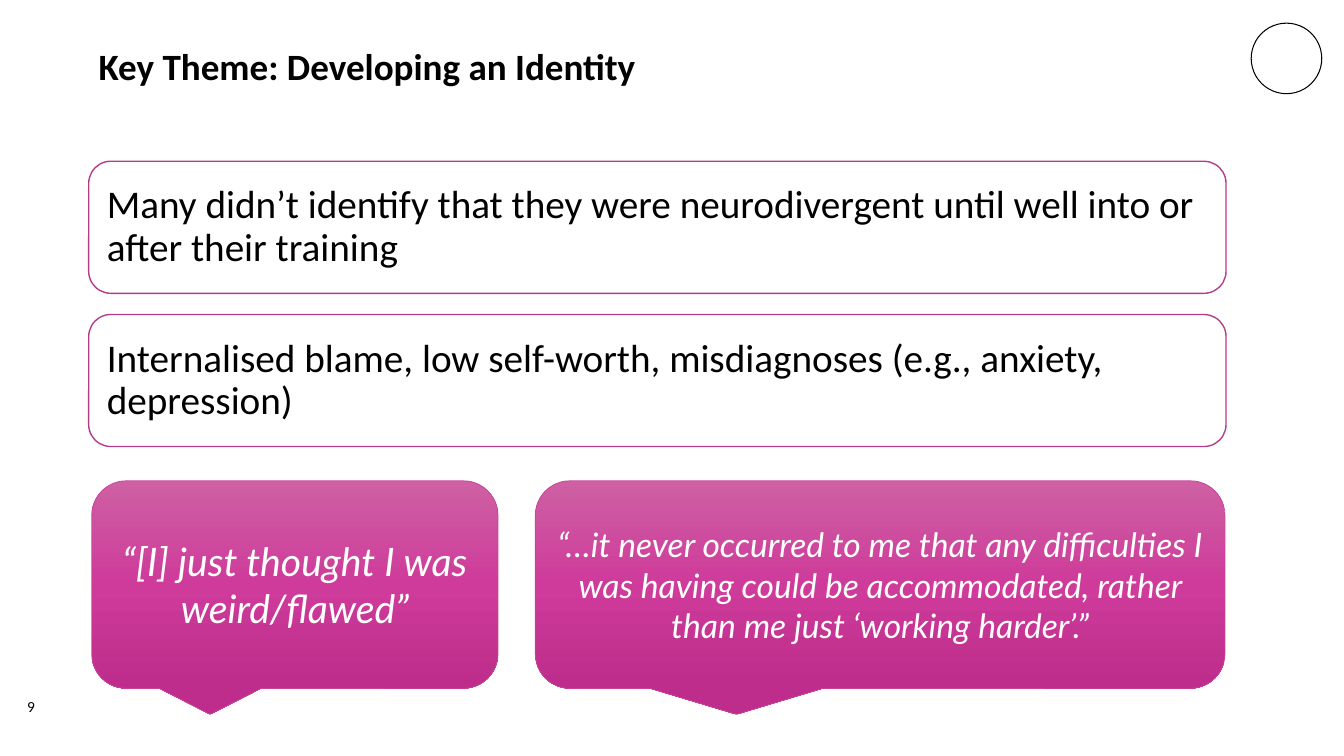
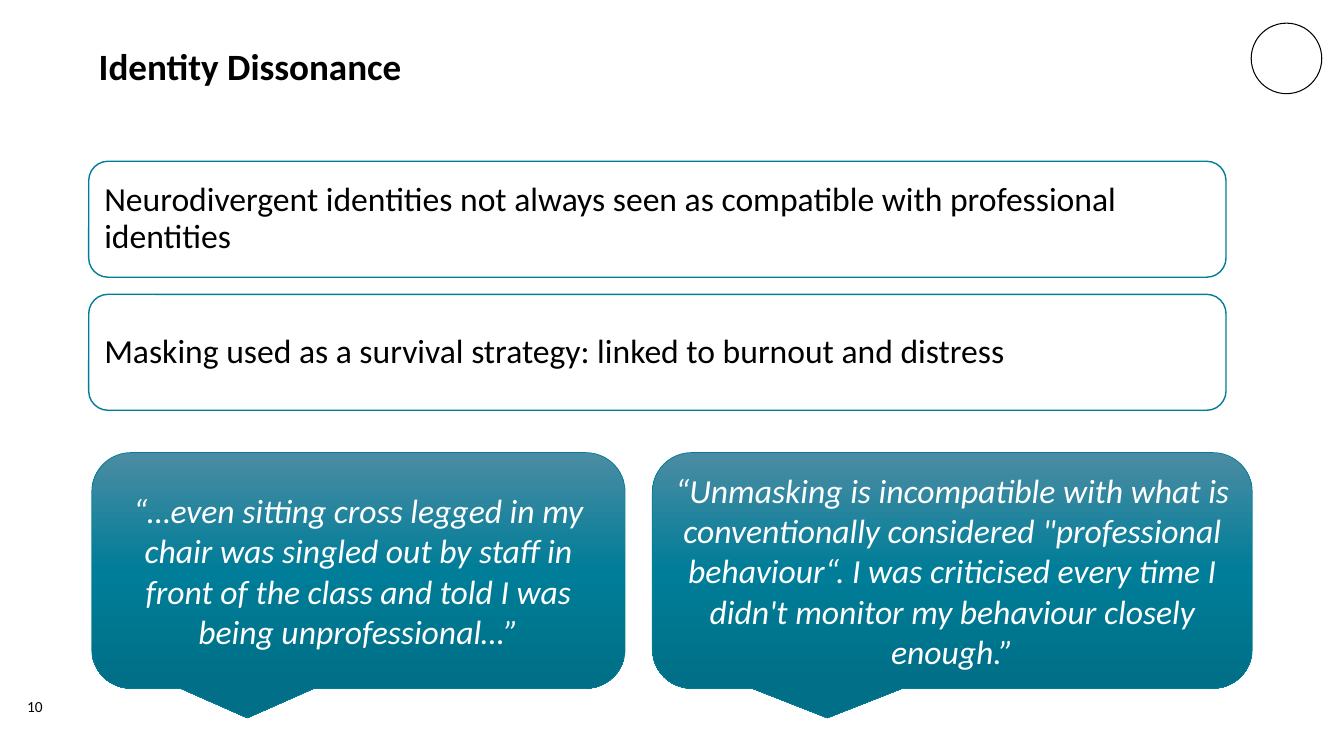
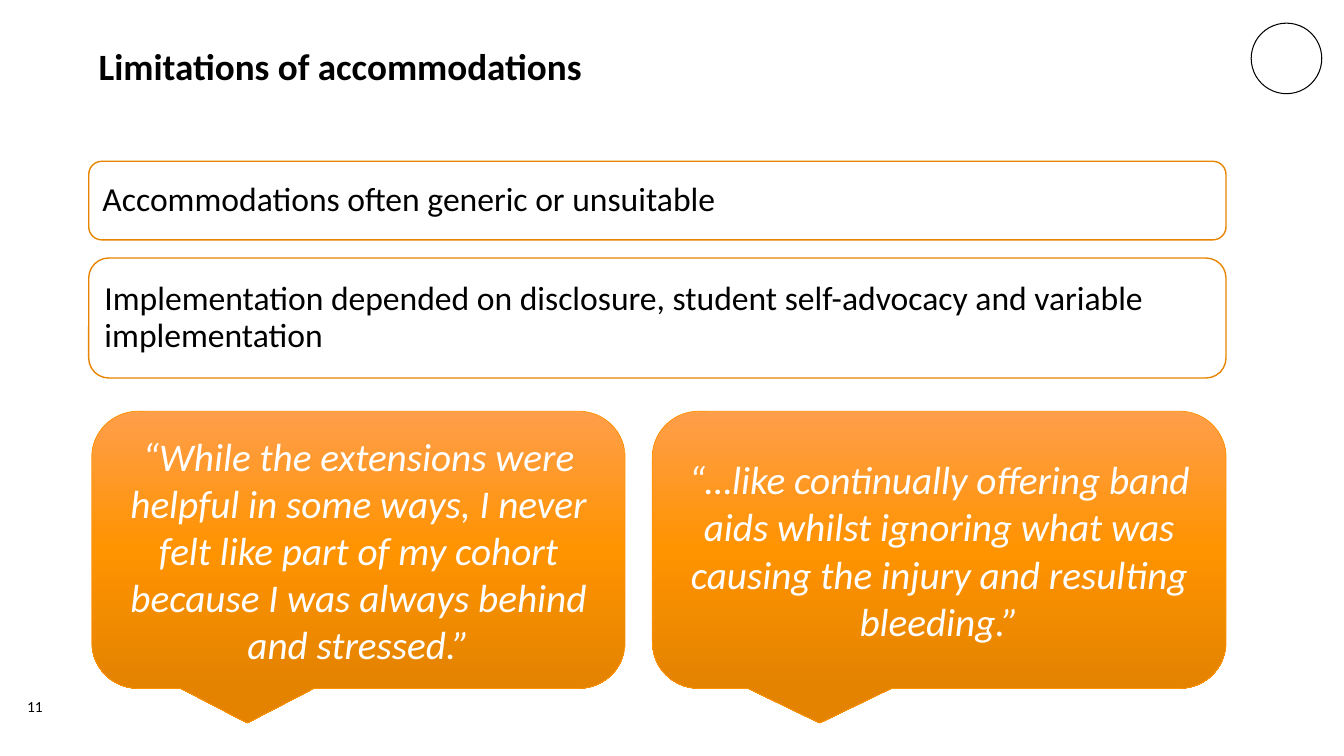
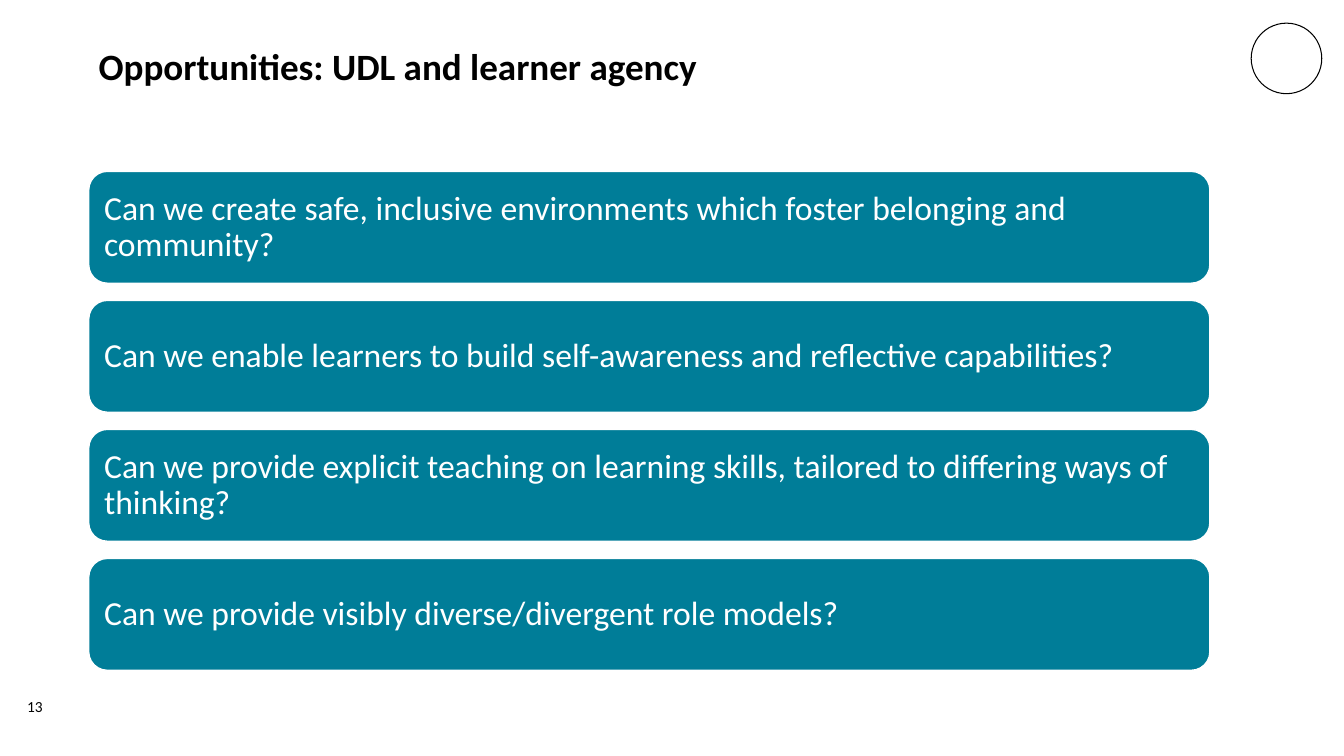
from copy import deepcopy

from pptx import Presentation
from pptx.dml.color import RGBColor
from pptx.enum import shapes, text
from pptx.oxml.ns import qn
from pptx.util import Inches, Pt

BLACK = RGBColor(0x00, 0x00, 0x00)
WHITE = RGBColor(0xFF, 0xFF, 0xFF)
MAGENTA = RGBColor(0xB5, 0x3C, 0x8A)
TEAL = RGBColor(0x00, 0x7D, 0x98)
AMBER = RGBColor(0xE7, 0x85, 0x00)

# Quote colours: gradient from top to bottom, then outline
MAGENTA_QUOTE = ((RGBColor(0xCE, 0x60, 0xA3), RGBColor(0xCE, 0x3B, 0x9A),
                  RGBColor(0xBE, 0x2D, 0x8B)), RGBColor(0xC7, 0x42, 0x98))
TEAL_QUOTE = ((RGBColor(0x4B, 0x8C, 0xA3), TEAL, RGBColor(0x00, 0x6F, 0x87)), TEAL)
AMBER_QUOTE = ((RGBColor(0xFF, 0x9E, 0x4B), RGBColor(0xFF, 0x93, 0x00),
                RGBColor(0xE3, 0x83, 0x00)), RGBColor(0xFF, 0x93, 0x00))

SHAPE = shapes.MSO_SHAPE
LEFT = 0.88
QUOTE_BOTTOM = 6.83


class Deck:
    """Shared style and the slide being filled."""

    def __init__(self):
        self.deck = Presentation()
        self.deck.slide_width = Inches(13.33)
        self.deck.slide_height = Inches(7.5)
        self.page = None

    def put_text(self, box, words, size, color, font="Calibri", bold=False, italic=False,
                 anchor=text.MSO_ANCHOR.MIDDLE, align=text.PP_ALIGN.LEFT,
                 spacing=1.0, insets=(0.1, 0.05, 0.1, 0.05)):
        frame = box.text_frame
        frame.text = words
        frame.word_wrap = True
        frame.vertical_anchor = anchor
        (frame.margin_left, frame.margin_top,
         frame.margin_right, frame.margin_bottom) = map(Inches, insets)
        para = frame.paragraphs[0]
        para.alignment = align
        para.line_spacing = spacing
        style = para.runs[0].font
        style.name, style.size, style.color.rgb = font, Pt(size), color
        style.bold, style.italic = bold, italic

    def textbox(self, left, top, width, height):
        return self.page.shapes.add_textbox(*map(Inches, (left, top, width, height)))

    def shape(self, kind, left, top, width, height, line, weight):
        box = self.page.shapes.add_shape(kind, *map(Inches, (left, top, width, height)))
        box.shadow.inherit = False
        box.line.color.rgb = line
        box.line.width = Pt(weight)
        return box

    def new_page(self, title, number, title_width=6.02):
        self.page = self.deck.slides.add_slide(self.deck.slide_layouts[6])
        # Corner ring
        ring = self.shape(SHAPE.OVAL, 12.41, 0.23, 0.7, 0.7, BLACK, 0.75)
        ring.fill.background()
        # Title and page number
        self.put_text(self.textbox(LEFT, 0.38, title_width, 1.02), title, 26.5, BLACK,
                      bold=True, anchor=text.MSO_ANCHOR.TOP)
        self.put_text(self.textbox(0.27, 6.88, 0.63, 0.27), str(number), 11, BLACK,
                      spacing=0.9, insets=(0, 0.05, 0.1, 0.05))

    def cards(self, top, width, gap, size, cards, fill, line, ink):
        """Stack rounded cards, given as (height, words), from the top down."""
        for height, words in cards:
            card = self.shape(SHAPE.ROUNDED_RECTANGLE, LEFT, top, width, height, line, 1)
            card.fill.solid()
            card.fill.fore_color.rgb = fill
            self.put_text(card, words, size, ink, spacing=0.9, insets=(size / 240,) * 4)
            top += height + gap

    def quote(self, left, top, width, words, size, colors, font="Calibri"):
        shades, line = colors
        bubble = self.shape(SHAPE.ROUNDED_RECTANGULAR_CALLOUT, left, top, width,
                            QUOTE_BOTTOM - top, line, 0.5)
        bubble.fill.gradient()
        bubble.fill.gradient_angle = 270
        stops = bubble._element.spPr.find(qn("a:gradFill")).find(qn("a:gsLst"))
        stops.append(deepcopy(stops[-1]))
        for index, (stop, shade) in enumerate(zip(bubble.fill.gradient_stops, shades)):
            stop.position = index / 2
            stop.color.rgb = shade
        self.put_text(bubble, words, size, WHITE, font=font, italic=True,
                      align=text.PP_ALIGN.CENTER)


def main():
    show = Deck()

    # Developing an identity
    show.new_page("Key Theme: Developing an Identity", 9)
    show.cards(1.6, 11.28, 0.21, 28, [
        (1.31, "Many didn’t identify that they were neurodivergent until well into or "
               "after their training"),
        (1.31, "Internalised blame, low self-worth, misdiagnoses (e.g., anxiety, depression)"),
    ], WHITE, MAGENTA, BLACK)
    show.quote(0.91, 4.77, 4.03, "“[I] just thought I was weird/flawed”",
               28, MAGENTA_QUOTE, "Lato")
    show.quote(5.31, 4.77, 6.84,
               "“…it never occurred to me that any difficulties I was having could be "
               "accommodated, rather than me just ‘working harder’.”",
               24, MAGENTA_QUOTE, "Lato")

    # Identity dissonance
    show.new_page("Identity Dissonance", 10)
    show.cards(1.6, 11.28, 0.17, 24, [
        (1.15, "Neurodivergent identities not always seen as compatible with "
               "professional identities"),
        (1.15, "Masking used as a survival strategy: linked to burnout and distress"),
    ], WHITE, TEAL, BLACK)
    show.quote(0.91, 4.49, 5.29,
               "“…even sitting cross legged in my chair was singled out by staff in front "
               "of the class and told I was being unprofessional…”", 24, TEAL_QUOTE)
    show.quote(6.47, 4.49, 5.95,
               "“Unmasking is incompatible with what is conventionally considered "
               "\"professional behaviour“. I was criticised every time I didn't monitor "
               "my behaviour closely enough.”", 24, TEAL_QUOTE)

    # Limitations of accommodations
    show.new_page("Limitations of accommodations", 11)
    show.cards(1.6, 11.28, 0.18, 24, [
        (0.78, "Accommodations often generic or unsuitable"),
        (1.19, "Implementation depended on disclosure, student self-advocacy and "
               "variable implementation"),
    ], WHITE, AMBER, BLACK)
    show.quote(0.91, 4.08, 5.29,
               "“While the extensions were helpful in some ways, I never felt like part of "
               "my cohort because I was always behind and stressed.”", 28, AMBER_QUOTE)
    show.quote(6.47, 4.08, 5.69,
               "“…like continually offering band aids whilst ignoring what was causing the "
               "injury and resulting bleeding.”", 28, AMBER_QUOTE)

    # Opportunities
    show.new_page("Opportunities: UDL and learner agency", 13, title_width=8.3)
    questions = [
        "Can we create safe, inclusive environments which foster belonging and community?",
        "Can we enable learners to build self-awareness and reflective capabilities?",
        "Can we provide explicit teaching on learning skills, tailored to differing ways "
        "of thinking?",
        "Can we provide visibly diverse/divergent role models?",
    ]
    show.cards(1.7, 11.12, 0.17, 24, [(1.11, question) for question in questions],
               TEAL, WHITE, WHITE)

    show.deck.save("out.pptx")


if __name__ == "__main__":
    main()
